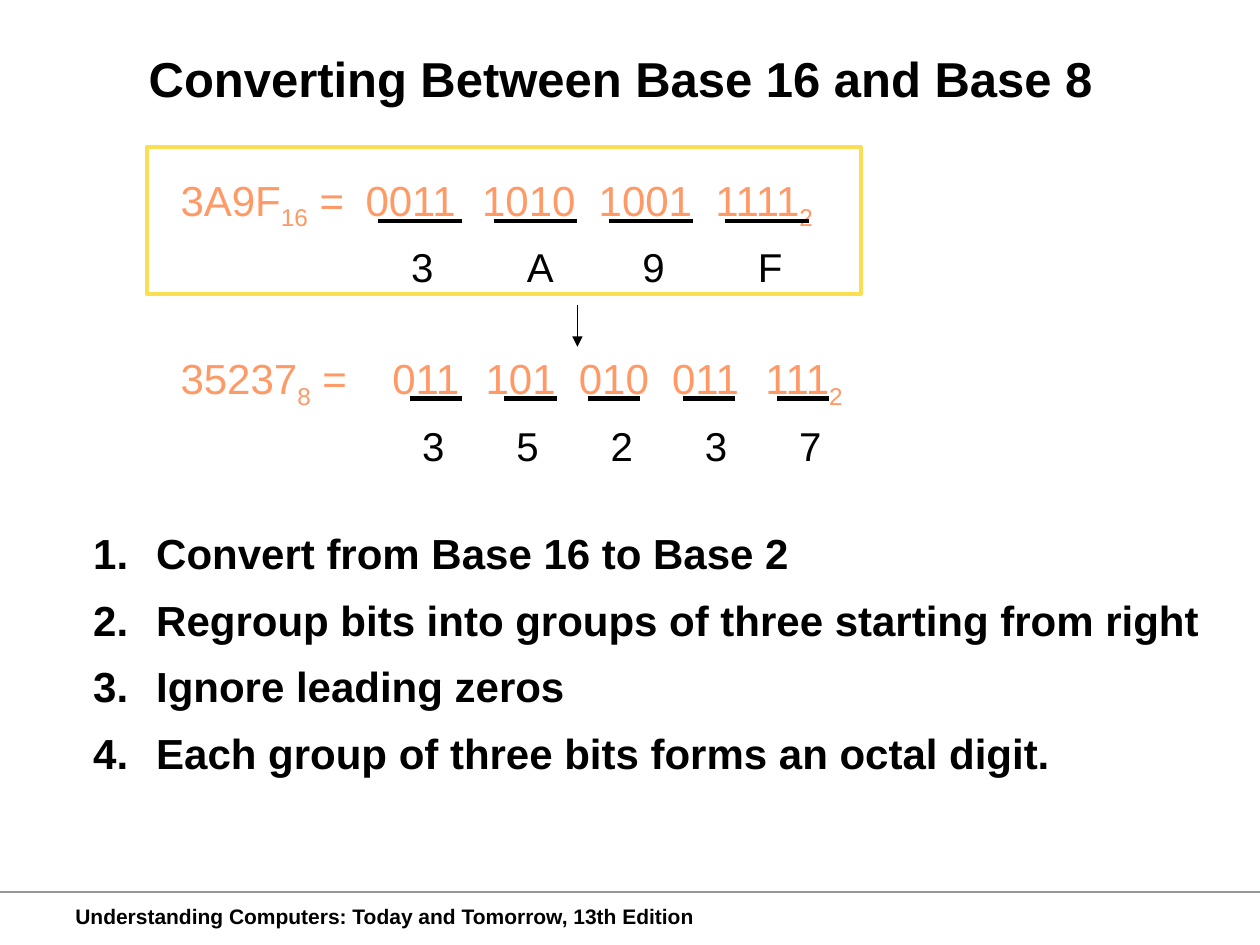
from pptx import Presentation
from pptx.dml.color import RGBColor
from pptx.enum.shapes import MSO_CONNECTOR as Conn, MSO_SHAPE as Shape
from pptx.enum.text import MSO_ANCHOR as Anchor, PP_ALIGN as Align
from pptx.oxml.ns import qn
from pptx.util import Cm, Pt
from lxml.etree import SubElement

COLORS = {"text": "000000", "number": "FF9966", "frame": "FBDF53", "rule": "969696"}


class SlideBuilder:
    """Holds the style and the slide being drawn."""

    def __init__(self, slide, font="Arial"):
        self.slide = slide
        self.font = font

    def color(self, name):
        return RGBColor.from_string(COLORS[name])

    def style(self, r, size, color="text", bold=False):
        r.font.name = self.font
        r.font.size = Pt(size)
        r.font.bold = bold
        r.font.color.rgb = self.color(color)

    def box(self, x, y, w, h, wrap=False):
        tf = self.slide.shapes.add_textbox(Cm(x), Cm(y), Cm(w), Cm(h)).text_frame
        tf.word_wrap = wrap
        return tf

    def text(self, x, y, w, h, text, size, bold=False, wrap=False, align=Align.LEFT):
        tf = self.box(x, y, w, h, wrap)
        tf.vertical_anchor = Anchor.MIDDLE
        p = tf.paragraphs[0]
        p.text = text
        p.alignment = align
        self.style(p.runs[0], size, bold=bold)

    def equation(self, x, y, w, number, base, groups, first_tab, tab_step):
        """A number and its bit groups, each group on its own tab stop."""
        p = self.box(x, y, w, 1.27).paragraphs[0]
        tabs = SubElement(p._p.get_or_add_pPr(), qn("a:tabLst"))
        for i in range(len(groups)):
            SubElement(tabs, qn("a:tab"), pos=str(Cm(first_tab + i * tab_step)), algn="l")
        bits = " =\t" + "\t".join(groups)
        for text, subscript in ((number, False), (base, True), (bits, False), ("2", True)):
            r = p.add_run()
            r.text = text
            self.style(r, 24, "number")
            if subscript:
                r.font._element.set("baseline", "-25000")

    def numbered_list(self, x, y, w, h, items, size):
        tf = self.box(x, y, w, h, wrap=True)
        tf.margin_left = tf.margin_right = Cm(0.18)
        tf.margin_top = tf.margin_bottom = Cm(0.08)
        for i, item in enumerate(items):
            p = tf.paragraphs[0] if i == 0 else tf.add_paragraph()
            p.text = item
            p.line_spacing = 0.75
            p.space_before = Pt(16.4 if i else 0)
            pPr = p._p.get_or_add_pPr()
            pPr.set("marL", str(Cm(1.27)))
            pPr.set("indent", str(-Cm(1.27)))
            SubElement(pPr, qn("a:buFont"), typeface=self.font)
            SubElement(pPr, qn("a:buAutoNum"), type="arabicPeriod")
            self.style(p.runs[0], size, bold=True)

    def line(self, x1, y1, x2, y2, width, color="text", arrow=False):
        c = self.slide.shapes.add_connector(Conn.STRAIGHT, Cm(x1), Cm(y1), Cm(x2), Cm(y2))
        c.line.width = Pt(width)
        c.line.color.rgb = self.color(color)
        if arrow:
            SubElement(c.line._get_or_add_ln(), qn("a:tailEnd"), type="triangle")
        SubElement(c._element.spPr, qn("a:effectLst"))

    def frame(self, x, y, w, h, width, color):
        sp = self.slide.shapes.add_shape(Shape.RECTANGLE, Cm(x), Cm(y), Cm(w), Cm(h))
        sp.shadow.inherit = False
        sp.fill.background()
        sp.line.width = Pt(width)
        sp.line.color.rgb = self.color(color)


def main():
    prs = Presentation()
    prs.slide_width, prs.slide_height = Cm(25.4), Cm(19.05)
    s = SlideBuilder(prs.slides.add_slide(prs.slide_layouts[6]))

    # Footer
    s.line(0, 17.98, 25.4, 17.98, 0.75, "rule")
    s.text(1.27, 18.08, 13.08, 0.76,
           "Understanding Computers: Today and Tomorrow, 13th Edition", 12, bold=True)

    # Title
    s.text(1.83, 0.61, 21.36, 1.93, "Converting Between Base 16 and Base 8", 28,
           bold=True, wrap=True, align=Align.CENTER)

    # Hexadecimal number: one digit per four bits
    s.frame(2.96, 2.96, 14.39, 2.96, 2.25, "frame")
    s.equation(3.39, 3.39, 13.61, "3A9F", "16", ["0011", "1010", "1001", "1111"], 3.73, 2.35)
    for i, digit in enumerate("3A9F"):
        x = 7.62 + i * 2.33
        s.line(x, 4.45, x + 1.69, 4.45, 2.25)
        s.text(x + 0.42, 4.87, 0.87, 1.02, digit, 23)

    # Step down to octal
    s.line(11.64, 6.14, 11.64, 6.99, 1, arrow=True)

    # Octal number: one digit per three bits
    s.equation(3.39, 6.99, 14.1, "35237", "8", ["011", "101", "010", "011", "111"], 4.27, 1.88)
    bar_starts = [8.26, 10.16, 11.85, 13.76, 15.66]
    for i, (digit, x) in enumerate(zip("35237", bar_starts)):
        s.line(x, 8.04, x + 1.06, 8.04, 3)
        s.text(8.26 + i * 1.9, 8.47, 0.87, 1.02, digit, 23)

    # Steps
    s.numbered_list(1.7, 10.8, 22.66, 9.09, [
        "Convert from Base 16 to Base 2",
        "Regroup bits into groups of three starting from right",
        "Ignore leading zeros",
        "Each group of three bits forms an octal digit.",
    ], 24)

    prs.save("out.pptx")


if __name__ == "__main__":
    main()
